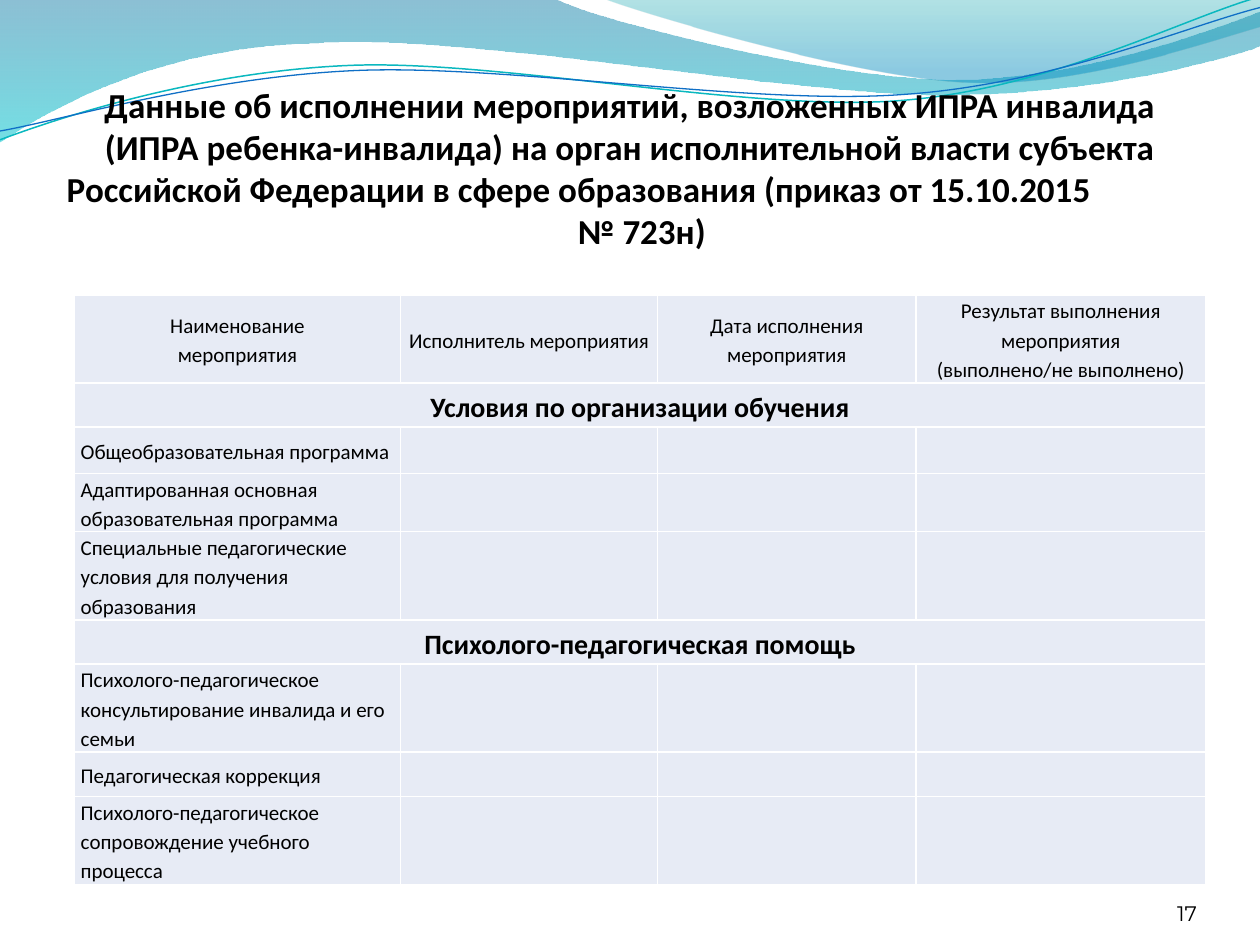
from lxml.etree import SubElement
from pptx import Presentation
from pptx.dml.color import RGBColor
from pptx.enum.text import MSO_ANCHOR, PP_ALIGN
from pptx.oxml.ns import qn
from pptx.util import Emu, Inches, Pt

BLACK = RGBColor(0x00, 0x00, 0x00)
WHITE = RGBColor(0xFF, 0xFF, 0xFF)
CELL_FILL = RGBColor(0xE7, 0xEB, 0xF5)
DEEP_BLUE = RGBColor(0x00, 0x74, 0xA1)
AQUA = RGBColor(0x00, 0xC6, 0xCF)
TEAL = RGBColor(0x00, 0xA1, 0xA9)
SKY = RGBColor(0x00, 0x8B, 0xBF)
LINE_TEAL = RGBColor(0x0A, 0xB8, 0xBF)
LINE_BLUE = RGBColor(0x0F, 0x6F, 0xC6)
BODY_FONT, NUMBER_FONT = "Calibri", "Montserrat"

# Each outline is a start point, then line ends (x, y) or cubic curves (two handles, end).
BIG_WAVE = [(0, 0), (4.4, -0.01), (4.76, 0.17, 6.64, 0.63, 7.58, 0.63),
            (8.53, 0.63, 9.58, 0.26, 10, 0.09), (10.01, 0.36),
            (9.83, 0.44, 8.7, 0.76, 7.46, 0.75), (6.22, 0.75, 3.82, 0.28, 2.57, 0.34),
            (1.29, 0.36, 0.46, 0.83, -0.01, 1.13), (0, 0)]
RIGHT_WAVE = [(4.79, -0.01), (5.09, 0.11, 6.82, 0.62, 7.69, 0.65),
              (8.56, 0.69, 9.61, 0.32, 10, 0.21), (10, 0), (4.79, -0.01)]
TEAL_STRAND = [(0, 1.11), (0.48, 0.93, 1.58, 0.57, 2.77, 0.52),
               (3.95, 0.47, 5.93, 0.89, 7.13, 0.8), (8.33, 0.71, 9.38, 0.15, 9.98, -0.02)]
BLUE_STRAND = [(0, 1.04), (0.47, 0.96, 1.64, 0.61, 2.83, 0.56),
               (4.03, 0.51, 5.97, 0.84, 7.17, 0.75), (8.36, 0.67, 9.41, 0.21, 10, 0.06)]

# Text, alignment and left indent of each title part.
TITLE = [
    ("Данные об исполнении мероприятий, возложенных ИПРА инвалида "
     "(ИПРА ребенка-инвалида) на орган исполнительной власти субъекта", PP_ALIGN.CENTER, 0),
    ("Российской Федерации в сфере образования (приказ от 15.10.2015", PP_ALIGN.LEFT, 0.03),
    ("№ 723н)", PP_ALIGN.CENTER, 0.19),
]
COLUMN_WIDTHS = [2.59, 2.04, 2.05, 2.3]
HEADINGS = ["Наименование\vмероприятия", "Исполнитель мероприятия",
            "Дата исполнения мероприятия",
            "Результат выполнения мероприятия\v(выполнено/не выполнено)"]
# Each section maps to its measures and their row heights.
SECTIONS = {
    "Условия по организации обучения": [
        ("Общеобразовательная программа", 0.37),
        ("Адаптированная основная образовательная программа", 0.46),
        ("Специальные педагогические условия для получения образования", 0.7)],
    "Психолого-педагогическая помощь": [
        ("Психолого-педагогическое консультирование инвалида и его семьи", 0.7),
        ("Педагогическая коррекция", 0.35),
        ("Психолого-педагогическое сопровождение учебного процесса", 0.7)],
}
HEADING_HEIGHT, SECTION_HEIGHT = 0.7, 0.35


def draw_outline(slide, left, top, outline, close):
    """Draw a freeform whose six-number segments become cubic curves."""
    points = [(Inches(left + x), Inches(top + y)) for segment in outline
              for x, y in zip(segment[::2], segment[1::2])]
    builder = slide.shapes.build_freeform(*points[0])
    builder.add_line_segments(points[1:], close=close)
    shape = builder.convert_to_shape()
    shape.shadow.inherit = False
    steps = shape._element.spPr.iter(qn("a:lnTo"))
    steps = iter(list(steps))
    for segment in outline[1:]:
        step = next(steps)
        if len(segment) == 6:
            step.tag = qn("a:cubicBezTo")
            for _ in range(2):
                handle = next(steps)
                step.append(handle[0])
                handle.getparent().remove(handle)
    return shape


def add_waves(slide, left, top):
    for outline, stops in [
        (BIG_WAVE, [(0, DEEP_BLUE, 45), (1, AQUA, 55)]),
        (RIGHT_WAVE, [(0, TEAL, 30), (0.8, SKY, 45)]),
    ]:
        wave = draw_outline(slide, left, top, outline, True)
        wave.line.fill.background()
        wave.fill.gradient()
        wave.fill.gradient_angle = 270
        for stop, (position, color, _) in zip(wave.fill.gradient_stops, stops):
            stop.position = position
            stop.color.rgb = color
        colors = wave._element.spPr.find(qn("a:gradFill")).iter(qn("a:srgbClr"))
        for color, (_, _, opacity) in zip(colors, stops):
            SubElement(color, qn("a:alpha")).set("val", str(opacity * 1000))
    for outline, color, width in [(TEAL_STRAND, LINE_TEAL, 0.85),
                                  (BLUE_STRAND, LINE_BLUE, 0.75)]:
        strand = draw_outline(slide, left, top, outline, False)
        strand.fill.background()
        strand.line.color.rgb = color
        strand.line.width = Pt(width)


def set_font(paragraph, size, name=BODY_FONT, bold=False):
    font = paragraph.font
    font.name, font.size, font.bold = name, Pt(size), bold
    font.color.rgb = BLACK


def add_text_frame(slide, left, top, width, height):
    box = slide.shapes.add_textbox(*map(Inches, (left, top, width, height)))
    frame = box.text_frame
    frame.word_wrap = True
    frame.vertical_anchor = MSO_ANCHOR.BOTTOM
    frame.margin_left = frame.margin_top = frame.margin_right = frame.margin_bottom = 0
    return frame


def add_title(slide, left, top, width, height):
    frame = add_text_frame(slide, left, top, width, height)
    for index, (text, alignment, indent) in enumerate(TITLE):
        paragraph = frame.add_paragraph() if index else frame.paragraphs[0]
        paragraph.text = text
        paragraph.alignment = alignment
        paragraph._p.get_or_add_pPr().set("marL", str(Inches(indent)))
        set_font(paragraph, 20, bold=True)


def add_slide_number(slide, left, top, width, height):
    paragraph = add_text_frame(slide, left, top, width, height).paragraphs[0]
    paragraph.text = "17"
    paragraph.alignment = PP_ALIGN.RIGHT
    set_font(paragraph, 12, NUMBER_FONT)


def add_borders(cell):
    properties = cell._tc.get_or_add_tcPr()
    for position, side in enumerate(("a:lnL", "a:lnR", "a:lnT", "a:lnB")):
        line = properties.makeelement(qn(side), {"w": str(Pt(1))})
        solid = SubElement(line, qn("a:solidFill"))
        SubElement(solid, qn("a:srgbClr")).set("val", str(WHITE))
        properties.insert(position, line)


def fill_cell(cell, text, size=12, bold=False, centered=True):
    cell.fill.solid()
    cell.fill.fore_color.rgb = CELL_FILL
    add_borders(cell)
    cell.margin_left = cell.margin_right = Inches(0.01)
    cell.margin_top = cell.margin_bottom = Emu(0)
    cell.vertical_anchor = MSO_ANCHOR.MIDDLE
    cell.text = text
    paragraph = cell.text_frame.paragraphs[0]
    paragraph.line_spacing = 1.15
    if centered:
        paragraph.alignment = PP_ALIGN.CENTER
    else:
        cell.margin_right = Inches(0.06)
        paragraph._p.get_or_add_pPr().set("marL", str(Inches(0.04)))
    set_font(paragraph, size, bold=bold)


def add_measures_table(slide, left, top):
    rows = [(HEADINGS, HEADING_HEIGHT, {})]
    for section, measures in SECTIONS.items():
        rows.append(([section], SECTION_HEIGHT, {"size": 16, "bold": True}))
        rows += [([name, "", "", ""], height, {"centered": False})
                 for name, height in measures]
    frame = slide.shapes.add_table(
        len(rows), len(COLUMN_WIDTHS), Inches(left), Inches(top),
        Inches(sum(COLUMN_WIDTHS)), Inches(sum(height for _, height, _ in rows)))
    table = frame.table
    for column, width in zip(table.columns, COLUMN_WIDTHS):
        column.width = Inches(width)
    for index, (texts, height, style) in enumerate(rows):
        table.rows[index].height = Inches(height)
        if len(texts) == 1:
            table.cell(index, 0).merge(table.cell(index, len(COLUMN_WIDTHS) - 1))
        for column, text in enumerate(texts):
            fill_cell(table.cell(index, column), text, **style)


def main():
    presentation = Presentation()
    presentation.slide_width, presentation.slide_height = Inches(10), Inches(7.5)
    slide = presentation.slides.add_slide(presentation.slide_layouts[6])
    add_waves(slide, 0, 0)
    add_title(slide, 0.5, 0.5, 9, 1.5)
    add_slide_number(slide, 8.67, 6.95, 0.83, 0.4)
    add_measures_table(slide, 0.59, 2.34)
    presentation.save("out.pptx")


if __name__ == "__main__":
    main()
